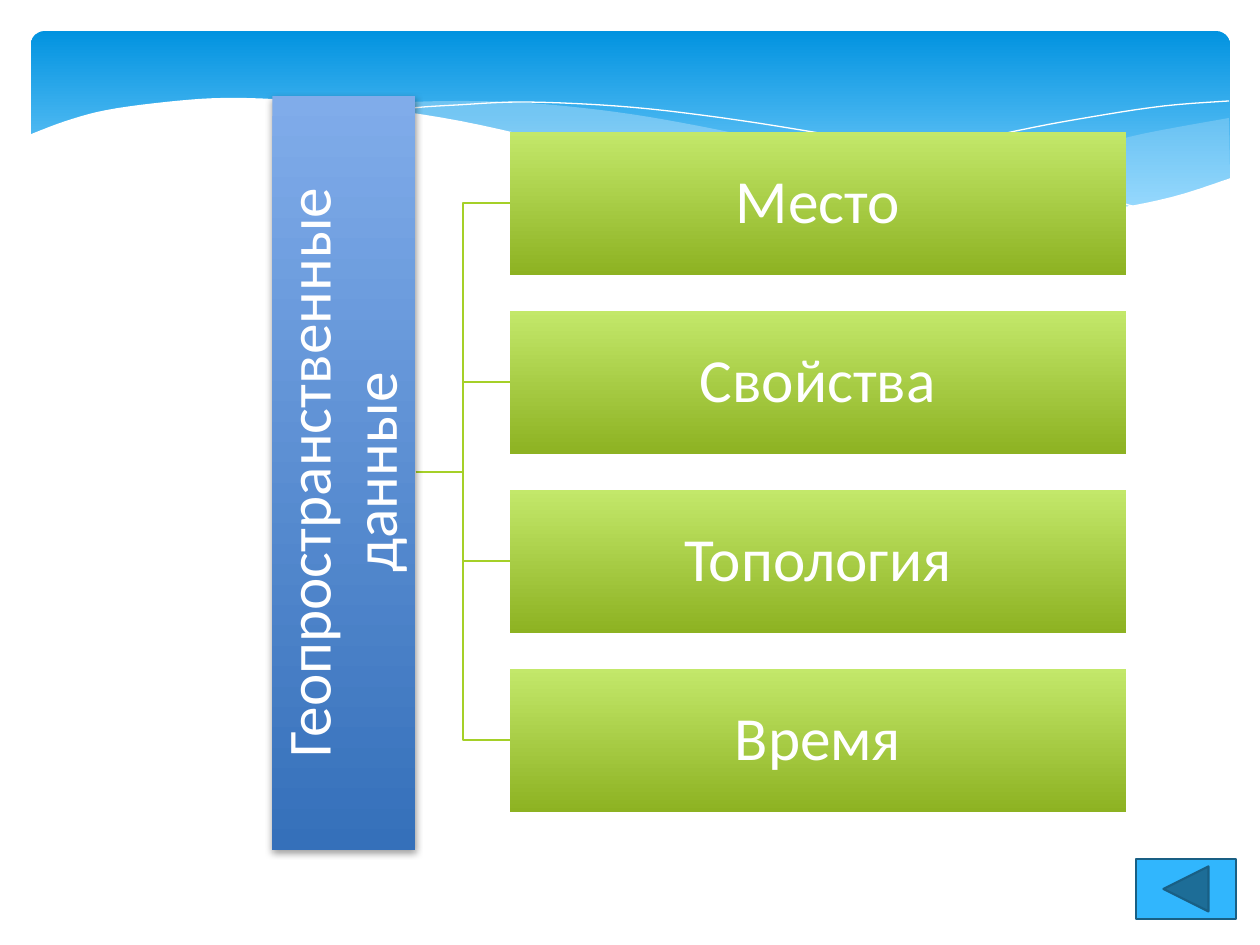
from lxml import etree
from pptx import Presentation
from pptx.dml.color import RGBColor
from pptx.enum.shapes import MSO_CONNECTOR as Connector, MSO_SHAPE as Preset
from pptx.enum.text import MSO_ANCHOR as Anchor, PP_ALIGN as Align
from pptx.oxml.ns import qn
from pptx.util import Emu, Pt

SCALE = 914400 / 126  # EMU in one px
COLORS = {
    "sky_top": "0293E0", "sky_bottom": "83D3FE", "wave": "C6E7FC",
    "white": "FFFFFF", "bar_top": "80ACEA", "bar_bottom": "3570BA",
    "box_top": "C3E86A", "box_bottom": "8DB222", "branch": "A5D028",
    "button": "31B6FD", "button_line": "195F84", "shadow": "000000",
}
TEXT_FORMAT = {"size": Pt(35), "name": "Calibri"}

# Waves of the header, as knots of smooth curves
WAVE_RIGHT = [
    [(1229, 118), (1142, 134), (1085, 149), (982, 173), (890, 192), (833, 202)],
    [(833, 202), (906, 210), (969, 215), (1026, 217), (1087, 214), (1140, 205),
     (1187, 194), (1230, 178)],
]
WAVE_MIDDLE = [
    [(1125, 210), (1055, 200), (976, 188), (890, 169), (793, 146), (699, 126),
     (616, 112), (529, 103), (455, 101), (394, 103), (360, 108)],
    [(360, 108), (431, 118), (509, 134), (566, 146), (668, 170), (757, 189),
     (838, 203), (910, 212), (989, 217), (1056, 217), (1125, 210)],
]
LINE_LEFT = [[(389, 113), (413, 108), (457, 105), (524, 102), (616, 106),
              (701, 115), (801, 130), (916, 151), (1047, 183), (1143, 209)]]
LINE_RIGHT = [[(772, 190), (823, 178), (907, 156), (1016, 131), (1091, 117),
               (1164, 106), (1229, 101)]]
WHITE_COVER = [
    [(1231, 178), (1172, 197), (1103, 210), (1019, 215), (937, 212), (842, 202),
     (760, 188), (667, 168), (563, 144), (460, 121), (368, 107), (290, 100),
     (223, 98), (166, 102), (107, 110), (66, 121), (29, 135)],
    [(29, 282), (1231, 282)],
]

BAR = (-33, 401, 754, 143)  # before its quarter turn
BOX_LEFT, BOX_TOP, BOX_WIDTH, BOX_HEIGHT, BOX_STEP = 510, 132, 616, 143, 179
BOXES = ["Место", "Свойства", "Топология", "Время"]


def px(value):
    return Emu(round(value * SCALE))


def rgb(name):
    return RGBColor.from_string(COLORS[name])


def fill_solid(shape, color, opacity=100):
    shape.fill.solid()
    shape.fill.fore_color.rgb = rgb(color)
    if opacity < 100:
        clr = shape._element.spPr.find(qn("a:solidFill"))[0]
        etree.SubElement(clr, qn("a:alpha"), val=str(opacity * 1000))


def fill_gradient(shape, top, bottom, end=1.0):
    """Fade downwards on the slide, whatever the turn of the shape."""
    shape.fill.gradient()
    shape.fill.gradient_angle = 270
    stops = shape.fill.gradient_stops
    for stop, color, position in zip(stops, (top, bottom), (0, end)):
        stop.color.rgb = rgb(color)
        stop.position = position
    shape._element.spPr.find(qn("a:gradFill")).set("rotWithShape", "0")


def add_preset(slide, preset, box):
    shape = slide.shapes.add_shape(preset, *map(px, box))
    shape.shadow.inherit = False
    shape.line.fill.background()
    return shape


def smooth(knots, steps=5):
    """Points of a Catmull-Rom curve through the knots."""
    if len(knots) < 3:
        return knots
    padded = [knots[0], *knots, knots[-1]]
    points = []
    for a, b, c, d in zip(padded, padded[1:], padded[2:], padded[3:]):
        for step in range(steps):
            t = step / steps
            points.append(tuple(
                (2 * q + (r - p) * t + (2 * p - 5 * q + 4 * r - s) * t ** 2
                 + (3 * q - p - 3 * r + s) * t ** 3) / 2
                for p, q, r, s in zip(a, b, c, d)))
    return points + [knots[-1]]


def add_curve(slide, curves, closed):
    points = [point for knots in curves for point in smooth(knots)]
    points = [(round(x * SCALE), round(y * SCALE)) for x, y in points]
    builder = slide.shapes.build_freeform(*points[0])
    builder.add_line_segments(points[1:], close=closed)
    shape = builder.convert_to_shape()
    shape.shadow.inherit = False
    return shape


def add_wave(slide, curves, color, opacity=100):
    shape = add_curve(slide, curves, True)
    fill_solid(shape, color, opacity)
    shape.line.fill.background()


def add_hairline(slide, curves):
    shape = add_curve(slide, curves, False)
    shape.fill.background()
    shape.line.color.rgb = rgb("white")
    shape.line.width = Pt(0)


def add_header(slide):
    sky = add_preset(slide, Preset.ROUNDED_RECTANGLE, (31, 31, 1199, 197))
    sky.adjustments[0] = 0.07
    fill_gradient(sky, "sky_top", "sky_bottom", 0.9)
    add_wave(slide, WAVE_RIGHT, "wave", 29)
    add_wave(slide, WAVE_MIDDLE, "wave", 40)
    add_hairline(slide, LINE_LEFT)
    add_hairline(slide, LINE_RIGHT)
    add_wave(slide, WHITE_COVER, "white")


def add_branch(slide, start, end):
    branch = slide.shapes.add_connector(Connector.ELBOW, *map(px, start + end))
    branch.line.color.rgb = rgb("branch")
    branch.line.width = Pt(1.25)
    etree.SubElement(branch._element.spPr, qn("a:effectLst"))


def add_node(slide, box, text, top, bottom):
    shape = add_preset(slide, Preset.RECTANGLE, box)
    fill_gradient(shape, top, bottom)
    frame = shape.text_frame
    frame.word_wrap = True
    frame.vertical_anchor = Anchor.MIDDLE
    for side in ("left", "top", "right", "bottom"):
        setattr(frame, f"margin_{side}", px(3))
    paragraph = frame.paragraphs[0]
    paragraph.alignment = Align.CENTER
    paragraph.line_spacing = 0.9
    run = paragraph.add_run()
    run.text = text
    for name, value in TEXT_FORMAT.items():
        setattr(run.font, name, value)
    run.font.color.rgb = rgb("white")
    return shape


def add_shadow(shape):
    effects = shape._element.spPr.find(qn("a:effectLst"))
    shadow = etree.SubElement(
        effects, qn("a:outerShdw"), blurRad=str(Pt(4)), dist=str(Pt(2)),
        dir="5400000", rotWithShape="0")
    color = etree.SubElement(shadow, qn("a:srgbClr"), val=COLORS["shadow"])
    etree.SubElement(color, qn("a:alpha"), val="38000")


def add_back_button(slide):
    button = add_preset(slide, Preset.ACTION_BUTTON_BACK_OR_PREVIOUS,
                        (1136, 859, 100, 60))
    fill_solid(button, "button")
    button.line.color.rgb = rgb("button_line")
    button.line.width = Pt(1.25)


def main():
    presentation = Presentation()
    presentation.slide_width, presentation.slide_height = px(1260), px(945)
    slide = presentation.slides.add_slide(presentation.slide_layouts[6])
    add_header(slide)

    # Branches from the bar to each box
    tops = [BOX_TOP + BOX_STEP * index for index in range(len(BOXES))]
    for top in tops:
        add_branch(slide, (416, 472), (BOX_LEFT, top + BOX_HEIGHT // 2))

    # Upright bar and the boxes
    bar = add_node(slide, BAR, "Геопространственные данные", "bar_top", "bar_bottom")
    bar.rotation = 270
    add_shadow(bar)
    for top, text in zip(tops, BOXES):
        add_node(slide, (BOX_LEFT, top, BOX_WIDTH, BOX_HEIGHT), text,
                 "box_top", "box_bottom")

    add_back_button(slide)
    presentation.save("out.pptx")


if __name__ == "__main__":
    main()
